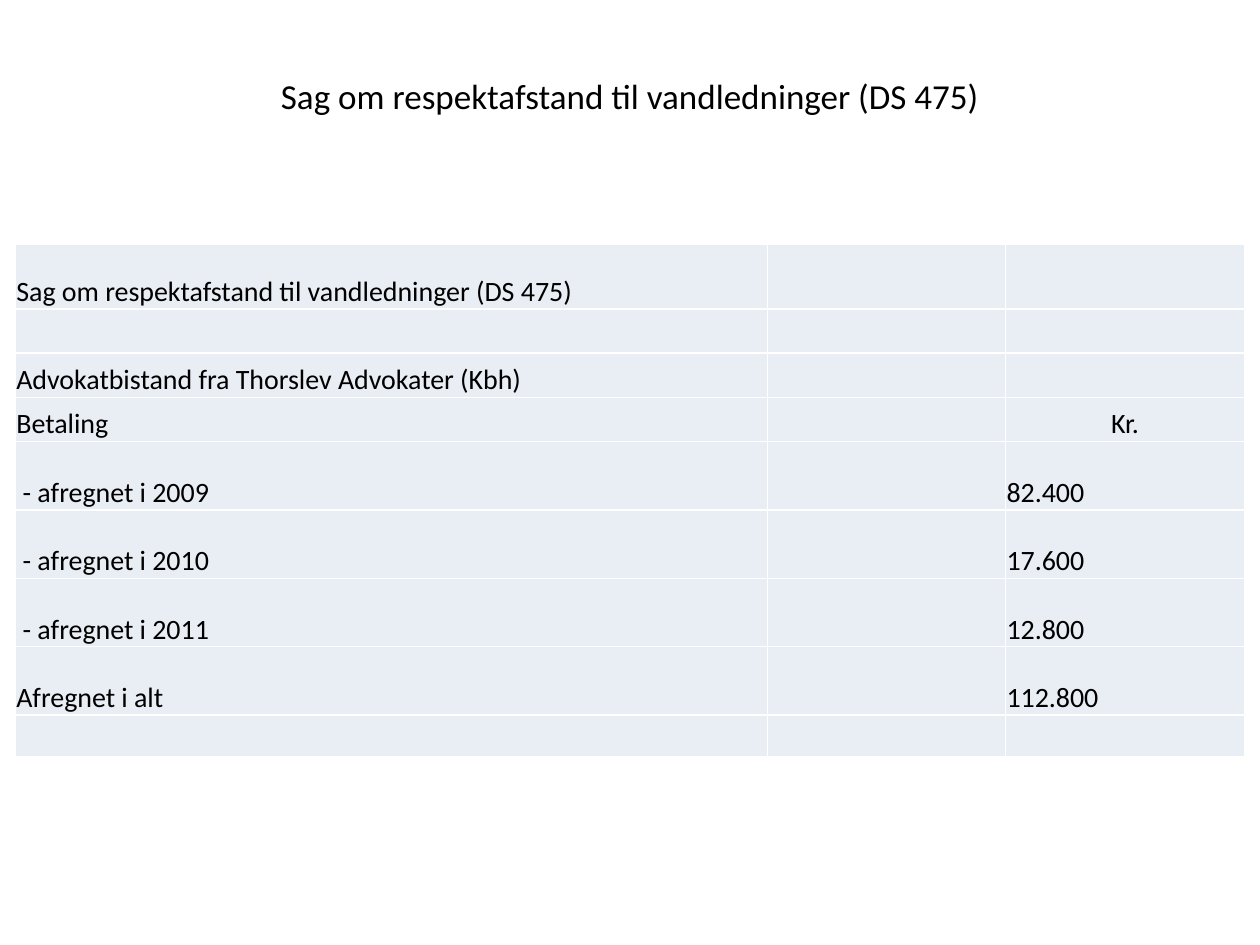
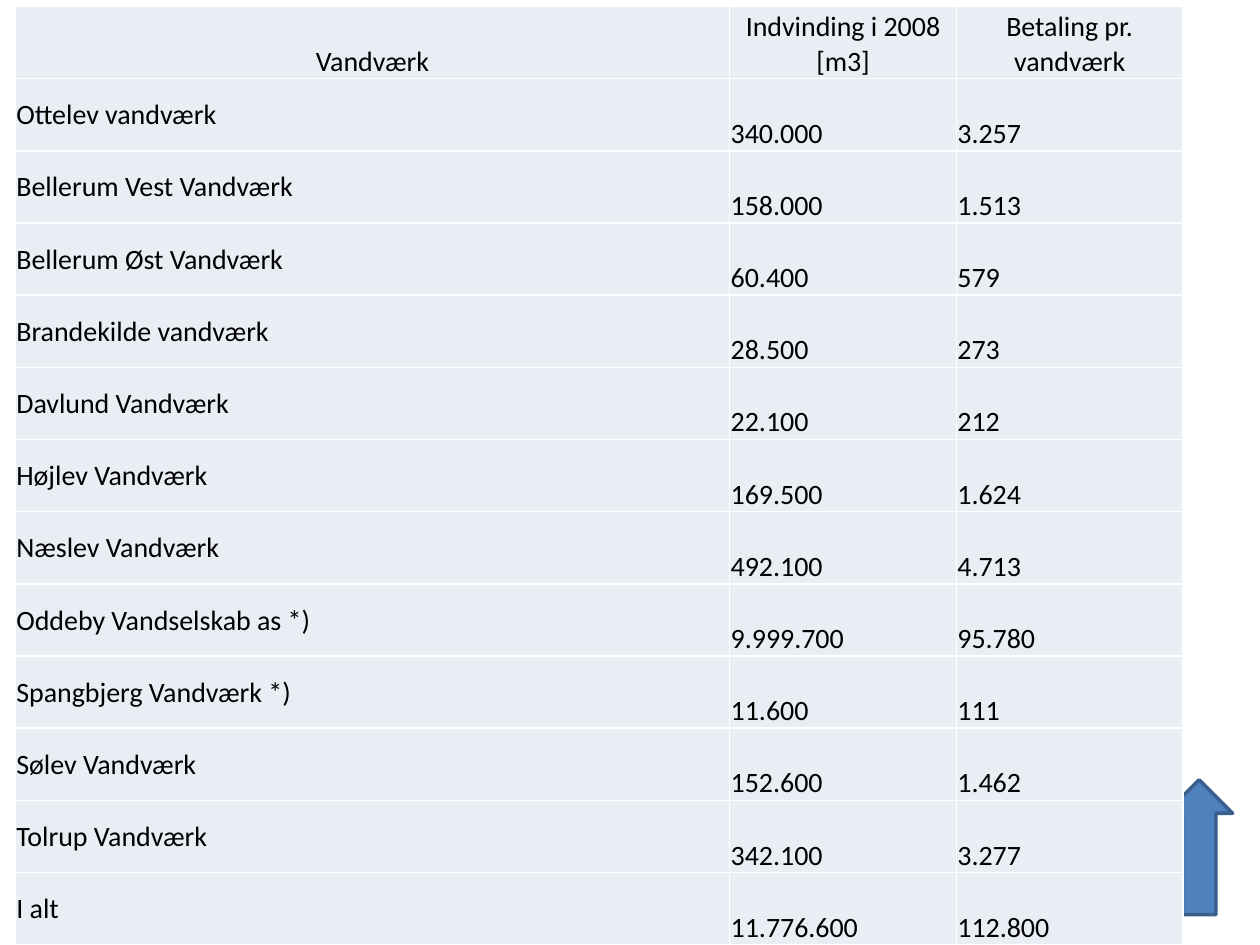
from lxml import etree
from pptx import Presentation
from pptx.dml.color import RGBColor
from pptx.enum.shapes import MSO_SHAPE
from pptx.enum.text import MSO_ANCHOR, PP_ALIGN
from pptx.oxml.ns import qn
from pptx.util import Cm, Pt

LEFT, CENTER = PP_ALIGN.LEFT, PP_ALIGN.CENTER
TOP, MIDDLE, BOTTOM = MSO_ANCHOR.TOP, MSO_ANCHOR.MIDDLE, MSO_ANCHOR.BOTTOM
UP_ARROW = MSO_SHAPE.UP_ARROW

BLACK = RGBColor(0x00, 0x00, 0x00)
WHITE = RGBColor(0xFF, 0xFF, 0xFF)
CELL_FILL = RGBColor(0xE9, 0xED, 0xF4)
ARROW_FILL = RGBColor(0x4F, 0x81, 0xBD)
ARROW_LINE = RGBColor(0x3A, 0x5F, 0x8C)
FONT = "Calibri"
TABLE_LEFT = 0.31

CASE = "Sag om respektafstand til vandledninger (DS 475)"
COSTS = [
    (CASE, "", ""),
    ("", "", ""),
    ("Advokatbistand fra Thorslev Advokater (Kbh)", "", ""),
    ("Betaling", "", "Kr."),
    (" - afregnet i 2009", "", "82.400"),
    (" - afregnet i 2010", "", "17.600"),
    (" - afregnet i 2011", "", "12.800"),
    ("Afregnet i alt", "", "112.800"),
    ("", "", ""),
]
COST_HEIGHTS = [1.3] + [0.89] * 3 + [1.38] * 4 + [0.83]
WATERWORKS = [
    ("Vandværk", "Indvinding i 2008 [m3]", "Betaling pr. vandværk"),
    ("Ottelev vandværk", "340.000", "3.257"),
    ("Bellerum Vest Vandværk", "158.000", "1.513"),
    ("Bellerum Øst Vandværk", "60.400", "579"),
    ("Brandekilde vandværk", "28.500", "273"),
    ("Davlund Vandværk", "22.100", "212"),
    ("Højlev Vandværk", "169.500", "1.624"),
    ("Næslev Vandværk", "492.100", "4.713"),
    ("Oddeby Vandselskab as *)", "9.999.700", "95.780"),
    ("Spangbjerg Vandværk *)", "11.600", "111"),
    ("Sølev Vandværk", "152.600", "1.462"),
    ("Tolrup Vandværk", "342.100", "3.277"),
    ("I alt", "11.776.600", "112.800"),
]


def write(tf, text, size=16, align=LEFT, anchor=BOTTOM):
    tf.word_wrap = True
    tf.vertical_anchor = anchor
    p = tf.paragraphs[0]
    p.alignment = align
    r = p.add_run()
    r.text = text
    r.font.name = FONT
    r.font.size = Pt(size)
    r.font.color.rgb = BLACK


def style_cell(cell):
    cell.margin_left = cell.margin_right = cell.margin_top = Cm(0.02)
    cell.margin_bottom = 0
    cell.fill.solid()
    cell.fill.fore_color.rgb = CELL_FILL
    tc_pr = cell._tc.get_or_add_tcPr()
    for i, side in enumerate(("lnL", "lnR", "lnT", "lnB")):
        ln = etree.Element(qn(f"a:{side}"), w=str(Pt(1)))
        fill = etree.SubElement(ln, qn("a:solidFill"))
        etree.SubElement(fill, qn("a:srgbClr"), val=str(WHITE))
        tc_pr.insert(i, ln)


def add_grid(s, left, top, widths, heights, rows, cell_format):
    table = s.shapes.add_table(
        len(rows), len(widths), Cm(left), Cm(top), Cm(sum(widths)), Cm(sum(heights))
    ).table
    table.first_row = table.horz_banding = False
    for column, width in zip(table.columns, widths):
        column.width = Cm(width)
    for i, (row, height) in enumerate(zip(rows, heights)):
        table.rows[i].height = Cm(height)
        for j, text in enumerate(row):
            cell = table.cell(i, j)
            style_cell(cell)
            if text:
                align, anchor = cell_format(i, j, text)
                write(cell.text_frame, text, align=align, anchor=anchor)
                cell.vertical_anchor = anchor


def add_title(s, text, left, top, width, height):
    sp = s.shapes.add_textbox(Cm(left), Cm(top), Cm(width), Cm(height))
    write(sp.text_frame, text, size=20, align=CENTER, anchor=TOP)


def add_arrow(s, left, top, width, height):
    sp = s.shapes.add_shape(UP_ARROW, Cm(left), Cm(top), Cm(width), Cm(height))
    sp.shadow.inherit = False
    sp.fill.solid()
    sp.fill.fore_color.rgb = ARROW_FILL
    sp.line.color.rgb = ARROW_LINE
    sp.line.width = Pt(2)


def cost_format(row, column, text):
    return CENTER if text == "Kr." else LEFT, BOTTOM


def waterworks_format(row, column, text):
    if row == 0:
        return CENTER, BOTTOM
    return LEFT, BOTTOM if column else MIDDLE


def cost_slide(s):
    add_title(s, CASE, 1.27, 1.37, 22.86, 1.96)
    add_grid(s, TABLE_LEFT, 4.93, [15.16, 4.8, 4.82], COST_HEIGHTS, COSTS, cost_format)


def waterworks_slide(s):
    add_arrow(s, 23.5, 15.72, 1.35, 2.72)
    heights = [1.455] * len(WATERWORKS)
    add_grid(s, TABLE_LEFT, 0.13, [14.4, 4.57, 4.57], heights, WATERWORKS, waterworks_format)


def main():
    prs = Presentation()
    prs.slide_width, prs.slide_height = Cm(25.4), Cm(19.05)
    for build in (cost_slide, waterworks_slide):
        build(prs.slides.add_slide(prs.slide_layouts[6]))
    prs.save("out.pptx")


if __name__ == "__main__":
    main()
